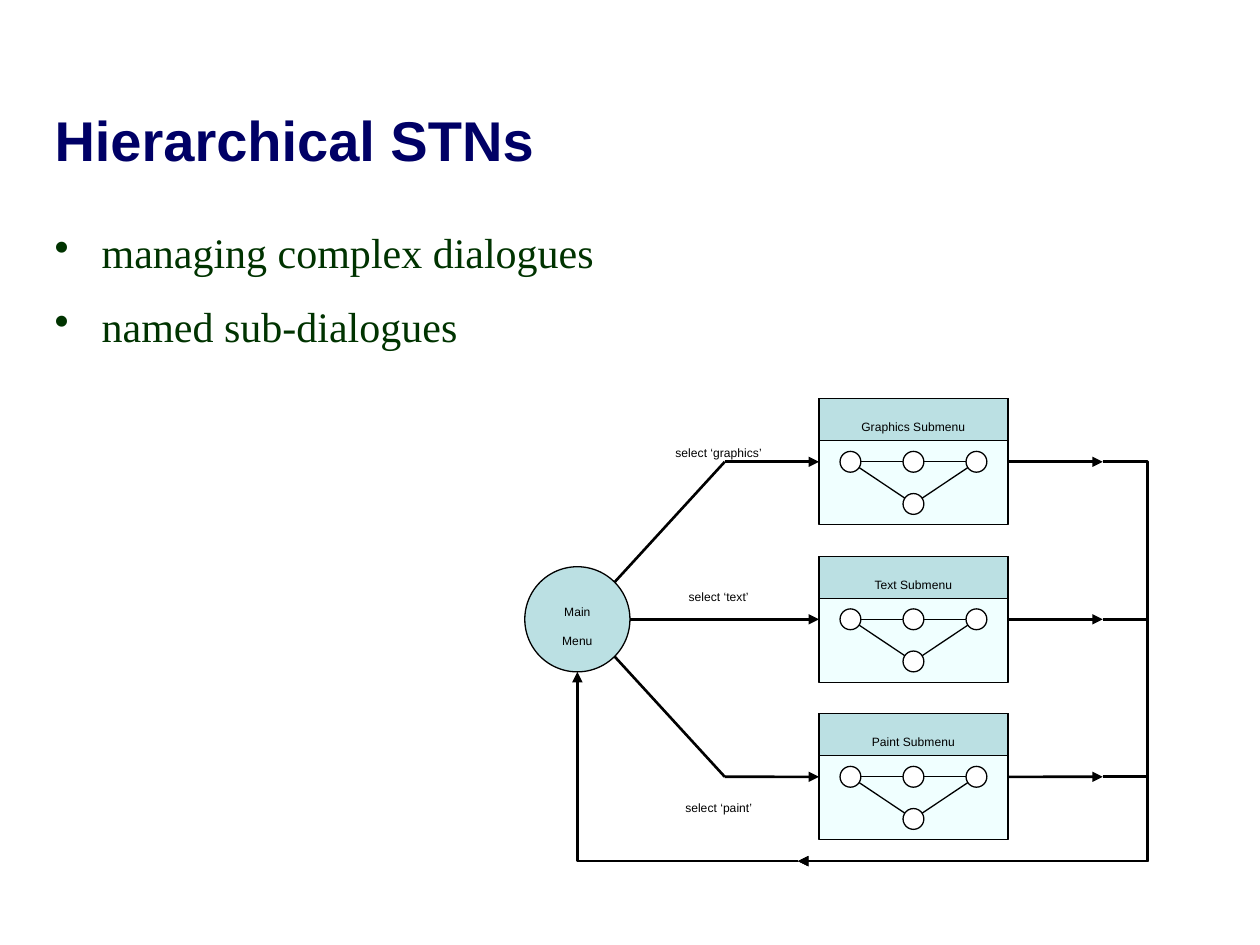
from copy import deepcopy
from dataclasses import dataclass
from lxml.etree import SubElement
from pptx import Presentation
from pptx.dml.color import RGBColor as Rgb
from pptx.enum.shapes import MSO_CONNECTOR as Link, MSO_SHAPE as Kind
from pptx.enum.text import MSO_ANCHOR as Anchor, MSO_AUTO_SIZE as Fit, PP_ALIGN as Align
from pptx.oxml.ns import qn
from pptx.util import Cm, Pt


@dataclass(frozen=True)
class Theme:
    navy: Rgb = Rgb.from_string("000066")
    green: Rgb = Rgb.from_string("003300")
    black: Rgb = Rgb.from_string("000000")
    white: Rgb = Rgb.from_string("FFFFFF")
    teal: Rgb = Rgb.from_string("BBE0E3")
    pale: Rgb = Rgb.from_string("F0FFFF")
    title: Pt = Pt(32)
    body: Pt = Pt(24)
    label: Pt = Pt(12)
    thin: Pt = Pt(0.75)
    thick: Pt = Pt(1.5)


theme = Theme()
deck = Presentation()
deck.slide_width, deck.slide_height = Cm(25.4), Cm(19.05)
slide = deck.slides.add_slide(deck.slide_layouts[6])
shapes = slide.shapes


def draw(kind, x, y, wide, high, fill):
    shape = shapes.add_shape(kind, Cm(x), Cm(y), Cm(wide), Cm(high))
    shape.shadow.inherit = False
    shape.fill.solid()
    shape.fill.fore_color.rgb = fill
    shape.line.color.rgb = theme.black
    shape.line.width = theme.thin
    return shape


def join(x1, y1, x2, y2, width=theme.thick, head=True, kind=Link.STRAIGHT):
    line = shapes.add_connector(kind, Cm(x1), Cm(y1), Cm(x2), Cm(y2))
    line.line.color.rgb = theme.black
    line.line.width = width
    if head:
        SubElement(line.line._get_or_add_ln(), qn("a:tailEnd"), type="triangle")
    SubElement(line._element.spPr, qn("a:effectLst"))
    return line


# Title and bullets
title = shapes.add_textbox(Cm(0.85), Cm(0.85), Cm(23.92), Cm(2.75)).text_frame
title.word_wrap = True
title.vertical_anchor = Anchor.BOTTOM
title.text = "Hierarchical STNs"
look = {"name": "Arial", "size": theme.title, "bold": True}
for key, value in look.items():
    setattr(title.paragraphs[0].runs[0].font, key, value)
title.paragraphs[0].runs[0].font.color.rgb = theme.navy

body = shapes.add_textbox(Cm(0.85), Cm(4.45), Cm(23.04), Cm(12.7)).text_frame
body.word_wrap = True
body.margin_right = 0
body.text = "managing complex dialogues\nnamed sub-dialogues"
look = {"name": "Times New Roman", "size": theme.body}
for num, para in enumerate(body.paragraphs):
    props = para._p.get_or_add_pPr()
    props.set("marL", str(Cm(0.95)))
    props.set("indent", str(-Cm(0.95)))
    SubElement(props, qn("a:buChar"), char="•")
    if num:
        para.space_before = Pt(13.5)
    for key, value in look.items():
        setattr(para.runs[0].font, key, value)
    para.runs[0].font.color.rgb = theme.green

# Diagram measures, in centimetres
left, wide, high = 16.51, 3.81, 2.54
right = left + wide
pitch = 1.25 * high
top = 8.04
step = wide / 3
dot, drop = 0.42, 0.85
hub_x, hub_y, hub_r = 11.64, top + high / 2 + pitch, 1.06
slant = 0.75
bend, exit, rail, floor, tip = 14.61, 22.23, 23.14, 17.36, 16.09
texts = []

# Main menu
hub = draw(Kind.OVAL, hub_x - hub_r, hub_y - hub_r, 2 * hub_r, 2 * hub_r, theme.teal)
texts.append((hub.text_frame, "Main\nMenu"))

# Submenus with their small networks, entries and exits
menus = [
    ("Graphics", 8.56, 3.5),
    ("Text", 11.48, 2.59),
    ("Paint", 15.72, 2.82),
]
for row, (name, label_y, label_w) in enumerate(menus):
    y = top + row * pitch
    mid = y + high / 2
    box = draw(Kind.RECTANGLE, left, y, wide, high, theme.pale)
    head = draw(Kind.RECTANGLE, left, y, wide, high / 3, theme.teal)
    texts.append((head.text_frame, f"{name} Submenu"))

    xs = [left + step * (col + 0.5) for col in range(3)]
    nodes = [(x, mid) for x in xs] + [(xs[1], mid + drop)]
    for start, end in [(0, 3), (2, 3), (2, 0)]:
        join(*nodes[start], *nodes[end], theme.thin, head=False)
    for x, node_y in nodes:
        draw(Kind.OVAL, x - dot / 2, node_y - dot / 2, dot, dot, theme.white)

    side = row - 1
    if side:
        join(hub_x + slant, hub_y + side * slant, bend, mid, head=False)
    entry = join(bend if side else hub_x + hub_r, mid, left, mid)
    entry.end_connect(box, 1)
    leave = join(right, mid, exit, mid)
    leave.begin_connect(box, 3)

    loop = join(exit, mid, tip, floor, kind=Link.ELBOW)
    guides = loop._element.spPr.find(qn("a:prstGeom")).get_or_add_avLst()
    bulge = round(-100000 * (rail - exit) / (exit - tip))
    SubElement(guides, qn("a:gd"), name="adj1", fmla=f"val {bulge}")

    label = shapes.add_textbox(Cm(14.49 - label_w / 2), Cm(label_y), Cm(label_w), Cm(0.76))
    label.text_frame.auto_size = Fit.SHAPE_TO_FIT_TEXT
    texts.append((label.text_frame, f"select ‘{name.lower()}’"))

# Way back to the main menu
back = join(tip, floor, hub_x, hub_y + hub_r, kind=Link.ELBOW)
back._element.spPr.find(qn("a:prstGeom")).set("prst", "bentConnector2")

# Diagram lettering, set below the baseline
look = {"name": "Arial", "size": theme.label}
for frame, words in texts:
    frame.word_wrap = False
    para = frame.paragraphs[0]
    para.text = words
    para.alignment = Align.CENTER
    for run in para.runs:
        for key, value in look.items():
            setattr(run.font, key, value)
        run.font.color.rgb = theme.black
        run._r.get_or_add_rPr().set("baseline", "-25000")
    for gap in para._p.findall(qn("a:br")):
        gap.append(deepcopy(para.runs[0]._r.rPr))

deck.save("out.pptx")
